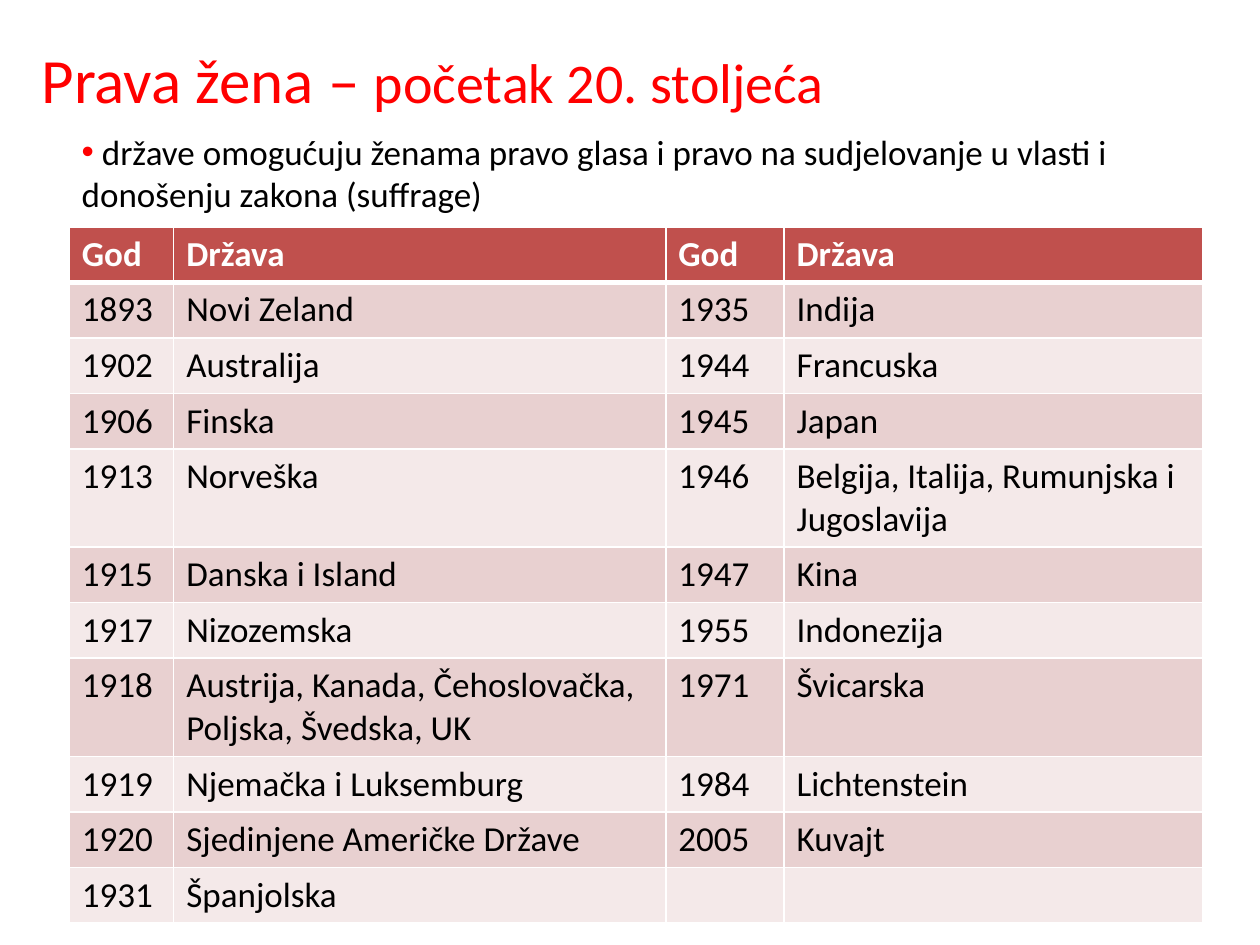
from lxml import etree
from pptx import Presentation
from pptx import util as u
from pptx.dml.color import RGBColor
from pptx.enum import text
from pptx.oxml.ns import qn

WIDTH, HEIGHT = u.Inches(10), u.Inches(7.5)
RED, WHITE, BLACK = "FF0000", "FFFFFF", "000000"
HEADER, BANDS = "C0504D", ("E8D0D0", "F4E9E9")
COLUMNS = (0.83, 3.91, 0.94, 3.33)
ROWS = (
    ("God", "Država", "God", "Država"),
    ("1893", "Novi Zeland", "1935", "Indija"),
    ("1902", "Australija", "1944", "Francuska"),
    ("1906", "Finska", "1945", "Japan"),
    ("1913", "Norveška", "1946", "Belgija, Italija, Rumunjska i Jugoslavija"),
    ("1915", "Danska i Island", "1947", "Kina"),
    ("1917", "Nizozemska", "1955", "Indonezija"),
    ("1918", "Austrija, Kanada, Čehoslovačka, Poljska, Švedska, UK",
     "1971", "Švicarska"),
    ("1919", "Njemačka i Luksemburg", "1984", "Lichtenstein"),
    ("1920", "Sjedinjene Američke Države", "2005", "Kuvajt"),
    ("1931", "Španjolska", "", ""),
)


def rgb(color):
    return RGBColor.from_string(color)


def share(x, y, w, h):
    return int(WIDTH * x), int(HEIGHT * y), int(WIDTH * w), int(HEIGHT * h)


def add_text(p, content, size=20, color=BLACK, bold=False):
    r = p.add_run()
    r.text = content
    r.font.name = "Calibri"
    r.font.size = u.Pt(size)
    r.font.bold = bold
    r.font.color.rgb = rgb(color)


def solid_fill(parent, color):
    fill = etree.SubElement(parent, qn("a:solidFill"))
    etree.SubElement(fill, qn("a:srgbClr"), val=color)


def set_borders(cell, top=1, bottom=1):
    tc_pr = cell._tc.get_or_add_tcPr()
    widths = {"a:lnL": 1, "a:lnR": 1, "a:lnT": top, "a:lnB": bottom}
    for i, (tag, width) in enumerate(widths.items()):
        ln = etree.Element(qn(tag), w=str(u.Pt(width)))
        solid_fill(ln, WHITE)
        tc_pr.insert(i, ln)


def set_bullet(p, color):
    p_pr = p._p.get_or_add_pPr()
    p_pr.set("marL", "0")
    p_pr.set("indent", "0")
    bullet_color = etree.SubElement(p_pr, qn("a:buClr"))
    etree.SubElement(bullet_color, qn("a:srgbClr"), val=color)
    etree.SubElement(p_pr, qn("a:buFont"), typeface="Arial")
    etree.SubElement(p_pr, qn("a:buChar"), char="•")


def place_title(s, box):
    sp = s.shapes.title
    sp.left, sp.top, sp.width, sp.height = box
    tf = sp.text_frame
    tf.vertical_anchor = text.MSO_ANCHOR.MIDDLE
    p = tf.paragraphs[0]
    p.alignment = text.PP_ALIGN.LEFT
    add_text(p, "Prava žena – ", size=36, color=RED)
    add_text(p, "početak 20. stoljeća", size=32, color=RED)


def place_table(s, box):
    table = s.shapes.add_table(len(ROWS), len(COLUMNS), *box).table
    for column, width in zip(table.columns, COLUMNS):
        column.width = int(box[2] * width / sum(COLUMNS))
    for i, row in enumerate(ROWS):
        header = i == 0
        fill = HEADER if header else BANDS[(i - 1) % 2]
        for j, content in enumerate(row):
            cell = table.cell(i, j)
            cell.fill.solid()
            cell.fill.fore_color.rgb = rgb(fill)
            set_borders(cell, top=3 if i == 1 else 1, bottom=3 if header else 1)
            if content:
                add_text(cell.text_frame.paragraphs[0], content,
                         color=WHITE if header else BLACK, bold=header)


def place_intro(s, box):
    tf = s.shapes.add_textbox(*box).text_frame
    tf.word_wrap = True
    tf.vertical_anchor = text.MSO_ANCHOR.MIDDLE
    p = tf.paragraphs[0]
    set_bullet(p, RED)
    add_text(p, " države omogućuju ženama pravo glasa i pravo na sudjelovanje "
                "u vlasti i donošenju zakona (suffrage)")


def main():
    prs = Presentation()
    prs.slide_width, prs.slide_height = WIDTH, HEIGHT
    s = prs.slides.add_slide(prs.slide_layouts[5])
    place_title(s, share(0.023, 0, 0.9, 1 / 6))
    place_table(s, share(0.055, 0.24, 0.9, 0.6))
    place_intro(s, share(0.055, 0.136, 0.892, 0.093))
    prs.save("out.pptx")


if __name__ == "__main__":
    main()
